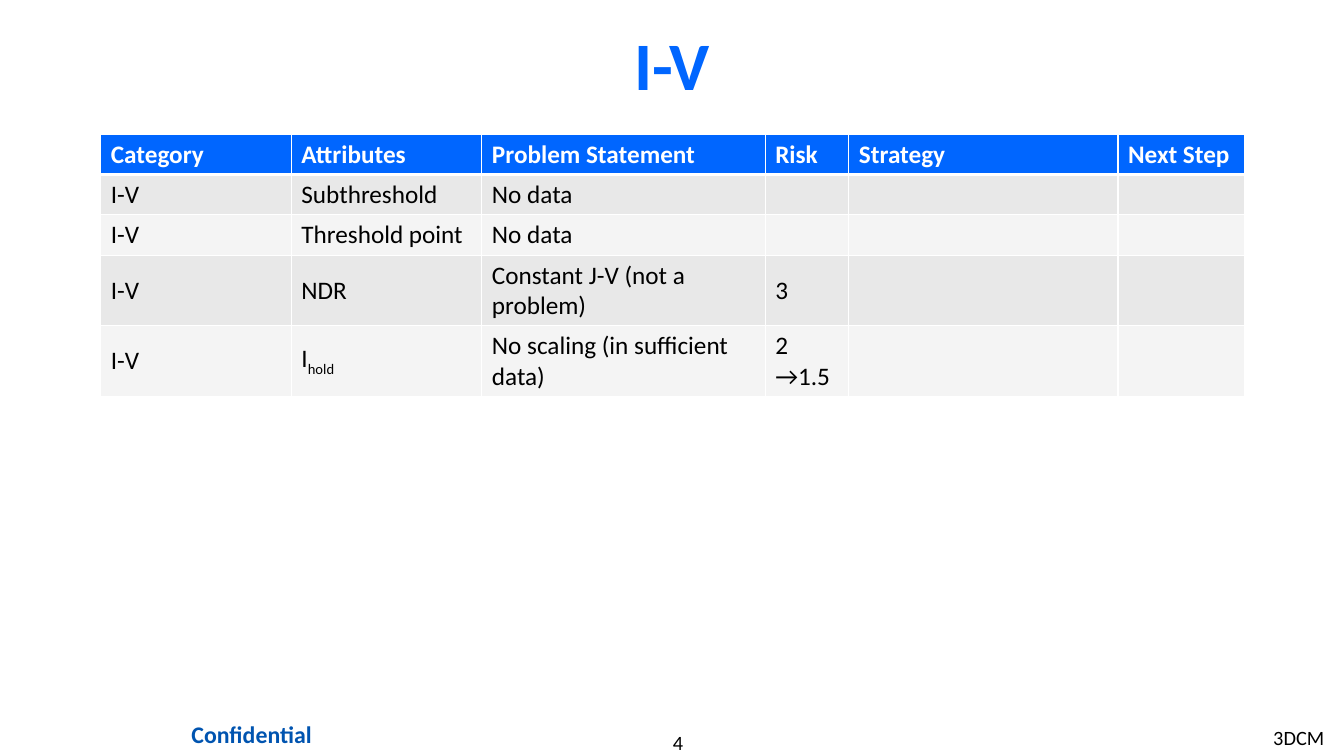
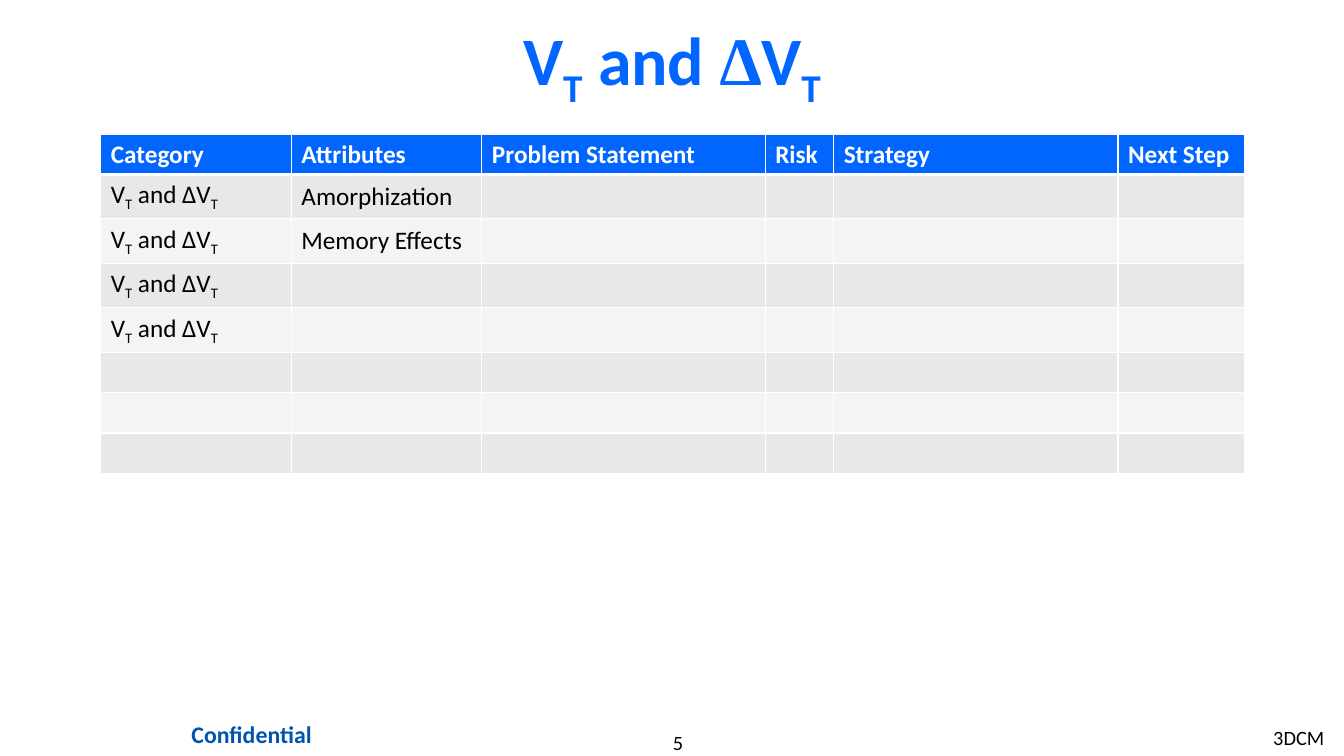
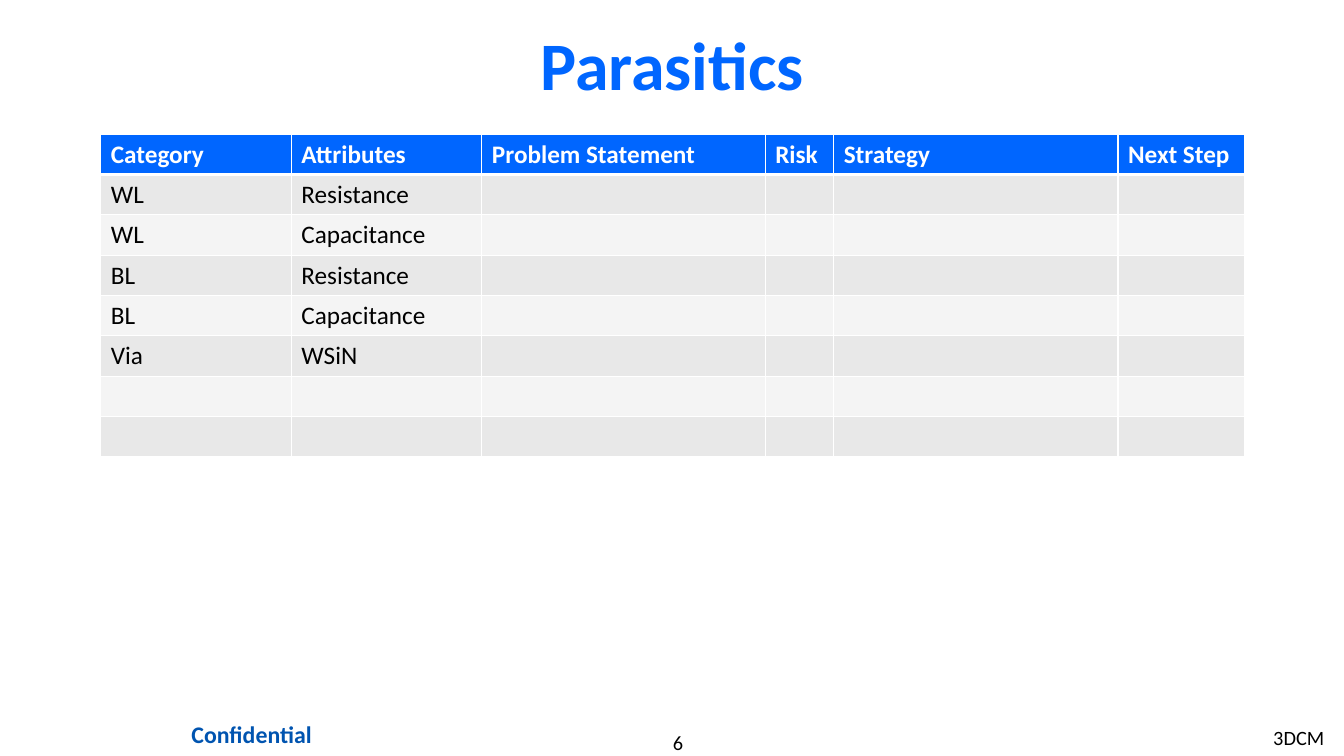
"""Build three slides of risk tables for memory cell attributes."""
import collections

import pptx
import pptx.dml.color
import pptx.enum.text
import pptx.oxml.ns
import pptx.util
from lxml import etree
from pptx.util import Inches

RGBColor = pptx.dml.color.RGBColor
BLUE = RGBColor(0x00, 0x66, 0xFF)
DARK_BLUE = RGBColor(0x00, 0x54, 0xB0)
WHITE = RGBColor(0xFF, 0xFF, 0xFF)
BLACK = RGBColor(0x00, 0x00, 0x00)
ROW_FILLS = (RGBColor(0xE8, 0xE8, 0xE8), RGBColor(0xF4, 0xF4, 0xF4))

FONT = "Calibri"
SYMBOL_FONT = "Times New Roman"
LEFT = pptx.enum.text.PP_ALIGN.LEFT
CENTER = pptx.enum.text.PP_ALIGN.CENTER
MIDDLE = pptx.enum.text.MSO_ANCHOR.MIDDLE
TOP = pptx.enum.text.MSO_ANCHOR.TOP

Piece = collections.namedtuple("Piece", "text subscript font", defaults=(False, FONT))

HEADINGS = ["Category", "Attributes", "Problem Statement", "Risk", "Strategy", "Next Step"]
WIDE_RISK_COLUMNS = (1.89, 1.89, 2.81, 0.83, 2.67, 1.26)
NARROW_RISK_COLUMNS = (1.89, 1.89, 2.81, 0.68, 2.82, 1.26)
ROW_HEIGHT = 0.4

SUBSCRIPT_T = Piece("T", True)
VT_TITLE = [Piece("V"), SUBSCRIPT_T, Piece(" and "), Piece("∆", font=SYMBOL_FONT),
            Piece("V"), SUBSCRIPT_T]
VT_LABEL = [Piece("V"), SUBSCRIPT_T, Piece(" and ∆V"), SUBSCRIPT_T]
HOLD_CURRENT = [Piece("I"), Piece("hold", True)]

SLIDES = [
    ("I-V", WIDE_RISK_COLUMNS, [
        ["I-V", "Subthreshold", "No data"],
        ["I-V", "Threshold point", "No data"],
        ["I-V", "NDR", "Constant J-V (not a problem)", "3"],
        ["I-V", HOLD_CURRENT, "No scaling (in sufficient data)", "2 →1.5"],
    ]),
    (VT_TITLE, NARROW_RISK_COLUMNS, [
        [VT_LABEL, "Amorphization"],
        [VT_LABEL, "Memory Effects"],
        [VT_LABEL],
        [VT_LABEL],
        [], [], [],
    ]),
    ("Parasitics", NARROW_RISK_COLUMNS, [
        ["WL", "Resistance"],
        ["WL", "Capacitance"],
        ["BL", "Resistance"],
        ["BL", "Capacitance"],
        ["Via", "WSiN"],
        [], [],
    ]),
]
FIRST_NUMBER = 4


def write(paragraph, content, size, color, bold=False):
    """Add a string or a list of pieces to a paragraph, run by run."""
    pieces = [Piece(content)] if isinstance(content, str) else content
    for piece in pieces:
        run = paragraph.add_run()
        run.text = piece.text
        run.font.name = piece.font
        run.font.size = pptx.util.Pt(size)
        run.font.bold = bold
        run.font.color.rgb = color
        if piece.subscript:
            run._r.get_or_add_rPr().set("baseline", "-25000")


def add_text(slide, box, content, size, color, bold=False, align=CENTER,
             anchor=TOP, insets=(0.1, 0.05)):
    """Add a text box of one paragraph."""
    frame = slide.shapes.add_textbox(*map(Inches, box)).text_frame
    frame.word_wrap = True
    frame.vertical_anchor = anchor
    frame.margin_left = frame.margin_right = Inches(insets[0])
    frame.margin_top = frame.margin_bottom = Inches(insets[1])
    frame.paragraphs[0].alignment = align
    write(frame.paragraphs[0], content, size, color, bold)


def add_footer(slide, number):
    """Add the slide number, the project name and the confidentiality mark."""
    add_text(slide, (5.56, 7.24, 2.33, 0.24), str(number), 14.5, BLACK, insets=(0, 0))
    add_text(slide, (12.53, 7.15, 0.8, 0.35), "3DCM", 14.5, BLACK, align=LEFT)
    add_text(slide, (1.55, 7.08, 1.89, 0.41), "Confidential", 17, DARK_BLUE,
             bold=True, insets=(0.12, 0.06))


def set_borders(cell, top, bottom):
    """Draw white cell borders, with the top and bottom widths in points."""
    properties = cell._tc.get_or_add_tcPr()
    for side, width in (("L", 1), ("R", 1), ("T", top), ("B", bottom)):
        line = etree.SubElement(properties, pptx.oxml.ns.qn(f"a:ln{side}"),
                                w=str(pptx.util.Pt(width)))
        fill = etree.SubElement(line, pptx.oxml.ns.qn("a:solidFill"))
        etree.SubElement(fill, pptx.oxml.ns.qn("a:srgbClr"), val=str(WHITE))


def add_risk_table(slide, widths, body):
    """Add a table with a blue heading row and banded body rows."""
    rows = [HEADINGS] + body
    frame = slide.shapes.add_table(len(rows), len(widths), Inches(1), Inches(1.33),
                                   Inches(sum(widths)), Inches(ROW_HEIGHT * len(rows)))
    table = frame.table
    table.horz_banding = False
    for column, width in zip(table.columns, widths):
        column.width = Inches(width)
    for row_index, contents in enumerate(rows):
        table.rows[row_index].height = Inches(ROW_HEIGHT)
        heading = row_index == 0
        for column_index in range(len(widths)):
            cell = table.cell(row_index, column_index)
            cell.vertical_anchor = MIDDLE
            set_borders(cell, 3 if row_index == 1 else 1, 3 if heading else 1)
            cell.fill.solid()
            cell.fill.fore_color.rgb = BLUE if heading else ROW_FILLS[(row_index - 1) % 2]
            if column_index < len(contents):
                write(cell.text_frame.paragraphs[0], contents[column_index], 18,
                      WHITE if heading else BLACK, heading)


def main():
    """Build and save the presentation."""
    presentation = pptx.Presentation()
    presentation.slide_width = Inches(13.33)
    presentation.slide_height = Inches(7.5)
    for number, (title, widths, body) in enumerate(SLIDES, FIRST_NUMBER):
        slide = presentation.slides.add_slide(presentation.slide_layouts[6])
        add_footer(slide, number)
        add_text(slide, (1, 0.17, 11.33, 0.92), title, 48.5, BLUE, bold=True, anchor=MIDDLE)
        add_risk_table(slide, widths, body)
    presentation.save("out.pptx")


if __name__ == "__main__":
    main()
